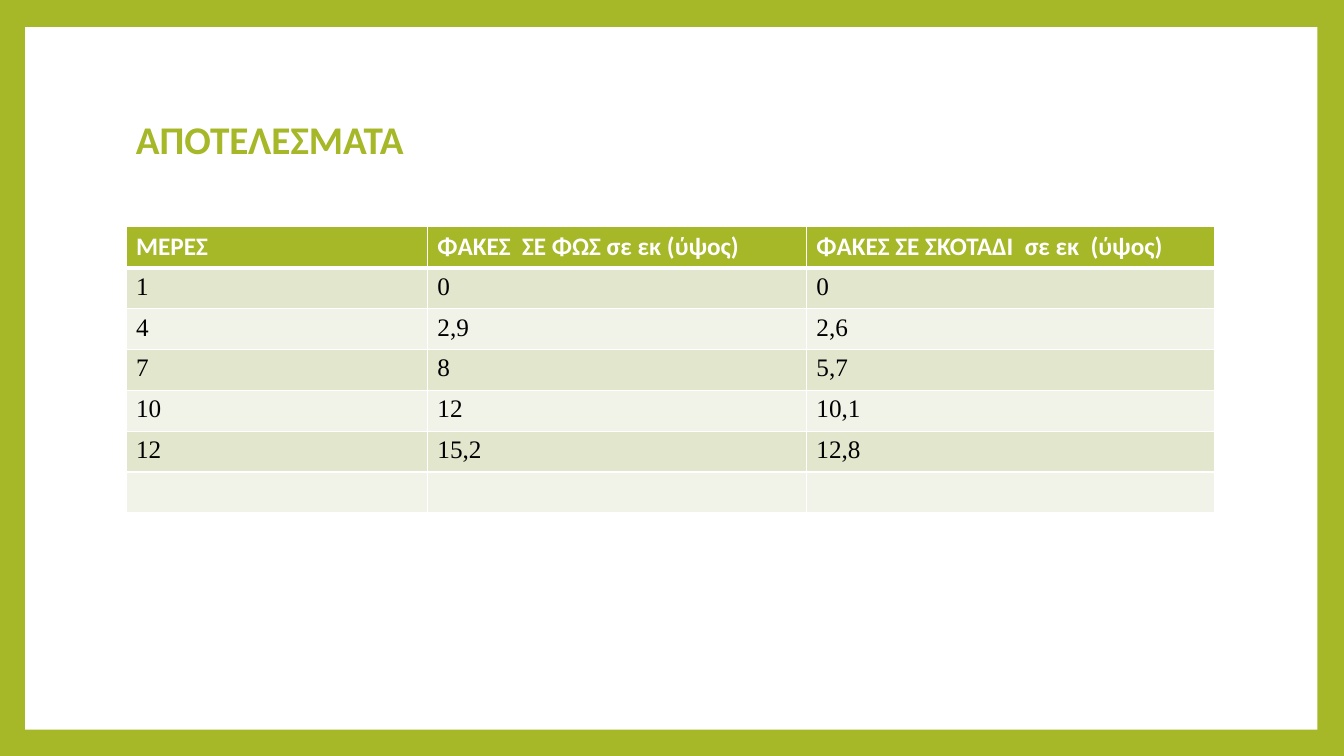
import lxml.etree
import pptx
import pptx.dml.color
import pptx.enum.shapes
import pptx.enum.text
import pptx.oxml.ns
import pptx.util

RGB = pptx.dml.color.RGBColor
LIME = RGB(0xA6, 0xB7, 0x27)
WHITE = RGB(0xFF, 0xFF, 0xFF)
BLACK = RGB(0x00, 0x00, 0x00)
SAGE = RGB(0xE1, 0xE6, 0xCD)
PALE = RGB(0xF1, 0xF3, 0xE8)

HEAD = "Calibri"
BODY = "Times New Roman"
COLS, ROWS = 160, 90
LEFT, WIDE = 15, 129.6
SPANS = (35.88, 45.12, 48.6)
HIGH = 4.87
DATA = (
    ("ΜΕΡΕΣ", "ΦΑΚΕΣ  ΣΕ ΦΩΣ σε εκ (ύψος)", "ΦΑΚΕΣ ΣΕ ΣΚΟΤΑΔΙ  σε εκ  (ύψος)"),
    ("1", "0", "0"),
    ("4", "2,9", "2,6"),
    ("7", "8", "5,7"),
    ("10", "12", "10,1"),
    ("12", "15,2", "12,8"),
    ("", "", ""),
)


class Deck:
    """Draws styled elements on a slide grid of 160 columns by 90 rows."""

    def __init__(self):
        self.show = pptx.Presentation()
        self.show.slide_width = pptx.util.Inches(13.33)
        self.show.slide_height = pptx.util.Inches(7.5)
        self.slide = self.show.slides.add_slide(self.show.slide_layouts[6])
        self.paint(self.slide.background.fill, LIME)

    def across(self, cols):
        return round(self.show.slide_width * cols / COLS)

    def down(self, rows):
        return round(self.show.slide_height * rows / ROWS)

    def place(self, left, top, wide, high):
        return self.across(left), self.down(top), self.across(wide), self.down(high)

    def paint(self, fill, tint):
        fill.solid()
        fill.fore_color.rgb = tint

    def label(self, para, text, face, size, tint, bold):
        run = para.add_run()
        run.text = text
        run.font.name = face
        run.font.size = pptx.util.Pt(size)
        run.font.color.rgb = tint
        run.font.bold = bold

    def panel(self, *spot):
        kind = pptx.enum.shapes.MSO_SHAPE.RECTANGLE
        shape = self.slide.shapes.add_shape(kind, *self.place(*spot))
        shape.shadow.inherit = False
        self.paint(shape.fill, WHITE)
        shape.line.fill.background()

    def title(self, text, *spot):
        frame = self.slide.shapes.add_textbox(*self.place(*spot)).text_frame
        frame.word_wrap = True
        frame.vertical_anchor = pptx.enum.text.MSO_ANCHOR.MIDDLE
        para = frame.paragraphs[0]
        para.line_spacing = 0.9
        self.label(para, text, HEAD, 28, LIME, True)

    def edge(self, cell, side, width):
        name = pptx.oxml.ns.qn
        props = cell._tc.get_or_add_tcPr()
        line = lxml.etree.SubElement(props, name("a:ln" + side), w=str(pptx.util.Pt(width)))
        fill = lxml.etree.SubElement(line, name("a:solidFill"))
        lxml.etree.SubElement(fill, name("a:srgbClr"), val=str(WHITE))

    def table(self, data, spans, left, top):
        spot = self.place(left, top, sum(spans), HIGH * len(data))
        grid = self.slide.shapes.add_table(len(data), len(spans), *spot).table
        for col, span in zip(grid.columns, spans):
            col.width = self.across(span)
        for r, texts in enumerate(data):
            grid.rows[r].height = self.down(HIGH)
            first = r == 0
            tint = LIME if first else SAGE if r % 2 else PALE
            for c, text in enumerate(texts):
                cell = grid.cell(r, c)
                for side, width in zip("LRTB", (1, 1, 3 if r == 1 else 1, 3 if first else 1)):
                    self.edge(cell, side, width)
                self.paint(cell.fill, tint)
                para = cell.text_frame.paragraphs[0]
                if text:
                    face, ink = (HEAD, WHITE) if first else (BODY, BLACK)
                    self.label(para, text, face, 18, ink, first)
                else:
                    para.font.size = pptx.util.Pt(18)


def main():
    deck = Deck()
    deck.panel(3, 3.24, 153.84, 83.64)
    deck.title("ΑΠΟΤΕΛΕΣΜΑΤΑ", LEFT, 8, WIDE, 17.8)
    deck.table(DATA, SPANS, LEFT, 27)
    deck.show.save("out.pptx")


if __name__ == "__main__":
    main()
